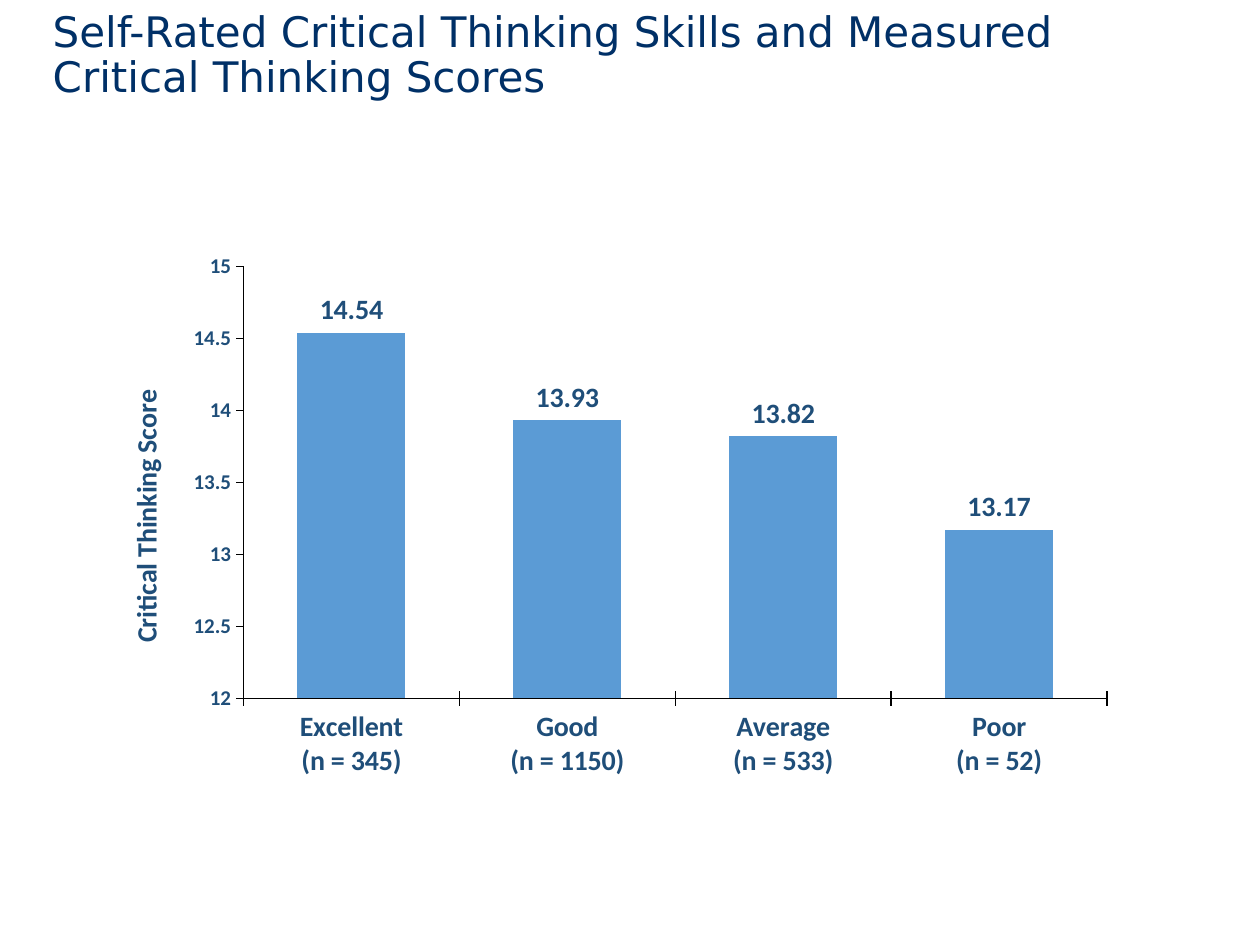
"""Build a slide with a column chart of critical thinking scores by self-rating."""
from pptx import Presentation
from pptx.chart.data import CategoryChartData
from pptx.dml.color import RGBColor
from pptx.enum.chart import XL_CHART_TYPE, XL_LABEL_POSITION, XL_TICK_MARK
from pptx.enum.text import MSO_ANCHOR
from pptx.oxml import parse_xml
from pptx.oxml.ns import nsdecls, qn
from pptx.util import Inches, Pt

COLORS = {"title": "003067", "label": "1F4E79", "bar": "5B9BD5", "axis": "000000"}
RATINGS = [
    ("Excellent", 345, 14.54),
    ("Good", 1150, 13.93),
    ("Average", 533, 13.82),
    ("Poor", 52, 13.17),
]
PLOT_AREA = {"x": 0.14, "y": 0.04, "w": 0.84, "h": 0.79}


def style_font(font, size, color, name="Calibri", bold=True):
    font.name = name
    font.size = Pt(size)
    font.bold = bold
    font.color.rgb = RGBColor.from_string(COLORS[color])


presentation = Presentation()
presentation.slide_width = Inches(10)
presentation.slide_height = Inches(7.5)
slide = presentation.slides.add_slide(presentation.slide_layouts[6])

heading = slide.shapes.add_textbox(Inches(0.32), Inches(0.05), Inches(8.62), Inches(0.8))
heading_frame = heading.text_frame
heading_frame.word_wrap = True
heading_frame.vertical_anchor = MSO_ANCHOR.MIDDLE
heading_line = heading_frame.paragraphs[0]
heading_line.line_spacing = 0.9
heading_run = heading_line.add_run()
heading_run.text = "Self-Rated Critical Thinking Skills and Measured Critical Thinking Scores"
style_font(heading_run.font, 24, "title", "DejaVu Sans", False)

scores = CategoryChartData()
scores.categories = [f"{rating}\n(n = {count})" for rating, count, score in RATINGS]
scores.add_series("Series 1", [score for rating, count, score in RATINGS])
chart = slide.shapes.add_chart(
    XL_CHART_TYPE.COLUMN_CLUSTERED,
    Inches(0.79), Inches(1.94), Inches(8.16), Inches(4.34), scores,
).chart
chart.has_title = False
chart.has_legend = False
style_font(chart.font, 12, "axis", bold=False)

score_axis = chart.value_axis
score_axis.minimum_scale = 12
score_axis.maximum_scale = 15
score_axis.major_unit = 0.5
score_axis.has_major_gridlines = False
score_axis.tick_labels.number_format = "General"
score_axis.tick_labels.number_format_is_linked = False
for axis, size, tick in (
    (chart.category_axis, 16, XL_TICK_MARK.CROSS),
    (score_axis, 12, XL_TICK_MARK.OUTSIDE),
):
    axis.major_tick_mark = tick
    axis.minor_tick_mark = XL_TICK_MARK.NONE
    axis.format.line.width = Pt(0.75)
    axis.format.line.color.rgb = RGBColor.from_string(COLORS["axis"])
    style_font(axis.tick_labels.font, size, "label")

score_title = score_axis.axis_title.text_frame
score_title._txBody.bodyPr.set("rot", "-5400000")
score_title._txBody.bodyPr.set("vert", "horz")
score_run = score_title.paragraphs[0].add_run()
score_run.text = "Critical Thinking Score"
style_font(score_run.font, 16, "label")

columns = chart.plots[0]
columns.gap_width = 100
columns.overlap = -27
columns.vary_by_categories = False
bars = columns.series[0]
bars.format.fill.solid()
bars.format.fill.fore_color.rgb = RGBColor.from_string(COLORS["bar"])
score_labels = bars.data_labels
score_labels.show_value = True
score_labels.position = XL_LABEL_POSITION.OUTSIDE_END
score_labels.number_format = "0.00"
score_labels.number_format_is_linked = False
style_font(score_labels.font, 16, "label")

plot_area = chart._chartSpace.chart.plotArea
for automatic_layout in plot_area.findall(qn("c:layout")):
    plot_area.remove(automatic_layout)
modes = '<c:xMode val="edge"/><c:yMode val="edge"/>'
extents = "".join(f'<c:{side} val="{share}"/>' for side, share in PLOT_AREA.items())
plot_area.insert(0, parse_xml(
    f'<c:layout {nsdecls("c")}><c:manualLayout><c:layoutTarget val="inner"/>'
    f"{modes}{extents}</c:manualLayout></c:layout>"
))

presentation.save("out.pptx")
